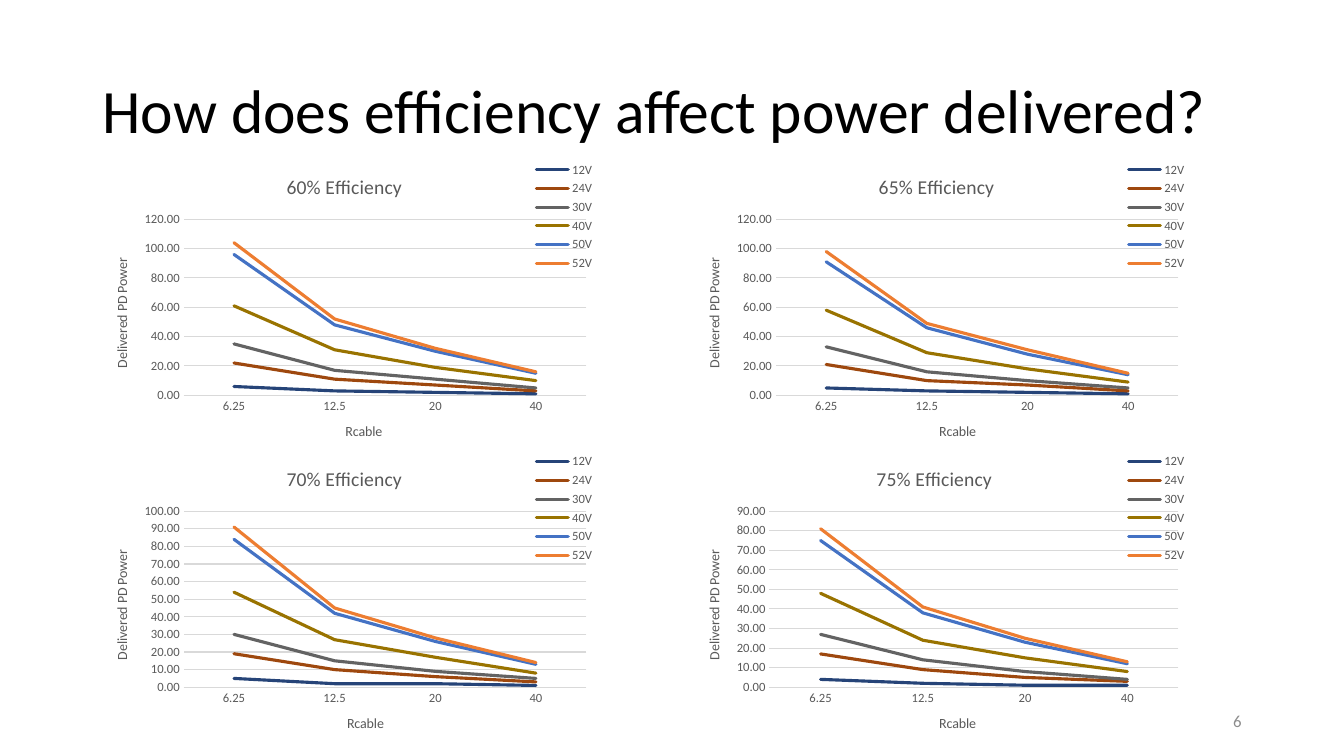
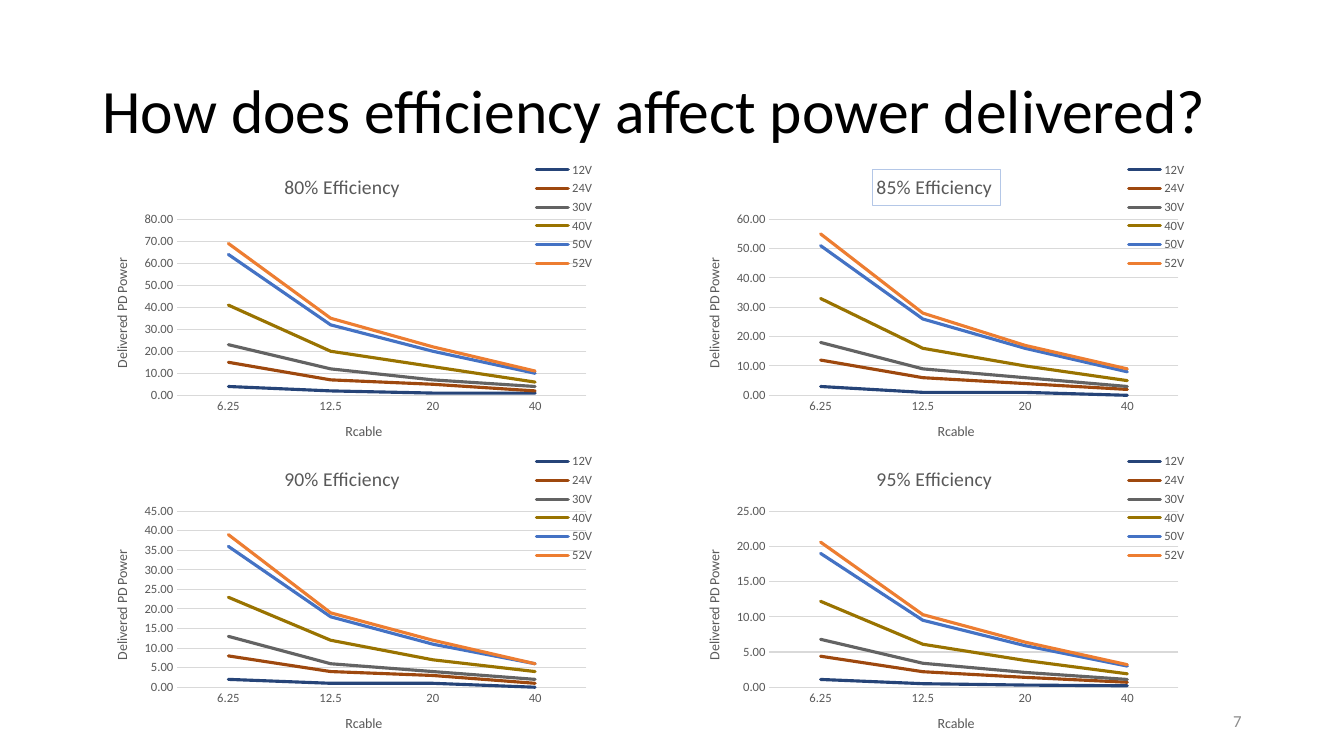
from pptx import Presentation
from pptx.chart.data import CategoryChartData
from pptx.dml.color import RGBColor
from pptx.enum.chart import XL_CHART_TYPE, XL_LEGEND_POSITION, XL_TICK_MARK
from pptx.enum.text import MSO_ANCHOR, PP_ALIGN
from pptx.util import Emu, Pt

# Shared look
FONT = "Calibri"
BLACK, GREY, PALE_GREY = "000000", "595959", "D9D9D9"
NUMBER_GREY, TITLE_FRAME = "8C8C8C", "B4C7E7"
TITLE = "How does efficiency affect power delivered?"

# Geometry in px, 96 to the inch
EMU_PER_PX = 9525
SLIDE_SIZE = (1280, 720)
TITLE_BOX = (88, 39, 1104, 139)
NUMBER_BOX = (904, 667, 288, 38)
CHART_LEFT, CHART_TOP = 88, 151
CHART_WIDTH, CHART_HEIGHT = 480, 288
COLUMN_STEP, ROW_STEP = 564, 278

# Chart data: cable resistances, and line colour by supply voltage
RESISTANCES = (6.25, 12.5, 20, 40)
VOLTAGE_COLORS = {12: "264478", 24: "9E480E", 30: "636363",
                  40: "997300", 50: "4472C4", 52: "ED7D31"}
# Slide number, then efficiencies in percent, row by row
SLIDES = {6: (60, 65, 70, 75), 7: (80, 85, 90, 95)}
FRAMED_EFFICIENCY = 85
# Titles that end in a space, which shifts their centring
SPACED_TITLES = (75, 80, 85, 90, 95)
SPACED_AXIS_TITLES = (60, 80, 85, 90, 95)
# Decimals of the values; whole numbers elsewhere
DECIMALS = {95: 1}


def px(length):
    return Emu(length * EMU_PER_PX)


def color(hex_string):
    return RGBColor.from_string(hex_string)


def style_font(font, size, hex_string):
    font.name = FONT
    font.size = Pt(size)
    font.bold = False
    font.color.rgb = color(hex_string)


def style_line(line, hex_string, width):
    line.color.rgb = color(hex_string)
    line.width = Pt(width)


def set_text(text_frame, text, size, hex_string):
    text_frame.text = text
    paragraph = text_frame.paragraphs[0]
    style_font(paragraph.runs[0].font, size, hex_string)
    return paragraph


def with_space(text, spaced):
    return f"{text} " if spaced else text


def delivered_power(voltage, resistance, percent):
    efficiency = percent / 100
    power = voltage ** 2 / resistance * efficiency * (1 - efficiency)
    return round(power, DECIMALS.get(percent))


def set_title(slide):
    title = slide.shapes.title
    title.left, title.top, title.width, title.height = map(px, TITLE_BOX)
    title.text_frame.vertical_anchor = MSO_ANCHOR.MIDDLE
    paragraph = set_text(title.text_frame, TITLE, 44, BLACK)
    paragraph.alignment = PP_ALIGN.LEFT
    paragraph.line_spacing = 0.9


def add_slide_number(slide, number):
    text_frame = slide.shapes.add_textbox(*map(px, NUMBER_BOX)).text_frame
    text_frame.word_wrap = True
    text_frame.vertical_anchor = MSO_ANCHOR.MIDDLE
    paragraph = set_text(text_frame, str(number), 12, NUMBER_GREY)
    paragraph.alignment = PP_ALIGN.RIGHT


def style_axis(axis, title):
    set_text(axis.axis_title.text_frame, title, 10, GREY)
    axis.major_tick_mark = axis.minor_tick_mark = XL_TICK_MARK.NONE
    style_font(axis.tick_labels.font, 9, GREY)


def add_efficiency_chart(slide, percent, left, top):
    data = CategoryChartData(number_format="0.00")
    data.categories = [f"{resistance:g}" for resistance in RESISTANCES]
    for voltage in VOLTAGE_COLORS:
        data.add_series(f"{voltage}V", [delivered_power(voltage, resistance, percent)
                                        for resistance in RESISTANCES])
    box = map(px, (left, top, CHART_WIDTH, CHART_HEIGHT))
    chart = slide.shapes.add_chart(XL_CHART_TYPE.LINE, *box, data).chart
    style_font(chart.font, 10, BLACK)

    # Title and legend
    title = with_space(f"{percent}% Efficiency", percent in SPACED_TITLES)
    set_text(chart.chart_title.text_frame, title, 14, GREY)
    if percent == FRAMED_EFFICIENCY:
        style_line(chart.chart_title.format.line, TITLE_FRAME, 0.75)
    chart.has_legend = True
    chart.legend.position = XL_LEGEND_POSITION.CORNER
    chart.legend.include_in_layout = True
    style_font(chart.legend.font, 9, GREY)

    # Axes
    style_axis(chart.category_axis,
               with_space("Rcable", percent in SPACED_AXIS_TITLES))
    style_line(chart.category_axis.format.line, PALE_GREY, 0.75)
    value_axis = chart.value_axis
    style_axis(value_axis, "Delivered PD Power")
    value_axis.format.line.fill.background()
    style_line(value_axis.major_gridlines.format.line, PALE_GREY, 0.75)
    value_axis.tick_labels.number_format = "0.00"
    value_axis.tick_labels.number_format_is_linked = False

    # Series, with round line ends
    plot = chart.plots[0]
    plot.vary_by_categories = False
    for series, hex_string in zip(plot.series, VOLTAGE_COLORS.values()):
        series.smooth = False
        style_line(series.format.line, hex_string, 2.25)
    for line in chart.element.xpath(".//c:ser/c:spPr/a:ln"):
        line.set("cap", "rnd")


def add_efficiency_slide(presentation, number, percents):
    slide = presentation.slides.add_slide(presentation.slide_layouts[5])
    set_title(slide)
    for index, percent in enumerate(percents):
        row, column = divmod(index, 2)
        add_efficiency_chart(slide, percent, CHART_LEFT + column * COLUMN_STEP,
                             CHART_TOP + row * ROW_STEP)
    add_slide_number(slide, number)


def main():
    presentation = Presentation()
    presentation.slide_width, presentation.slide_height = map(px, SLIDE_SIZE)
    for number, percents in SLIDES.items():
        add_efficiency_slide(presentation, number, percents)
    presentation.save("out.pptx")


if __name__ == "__main__":
    main()
